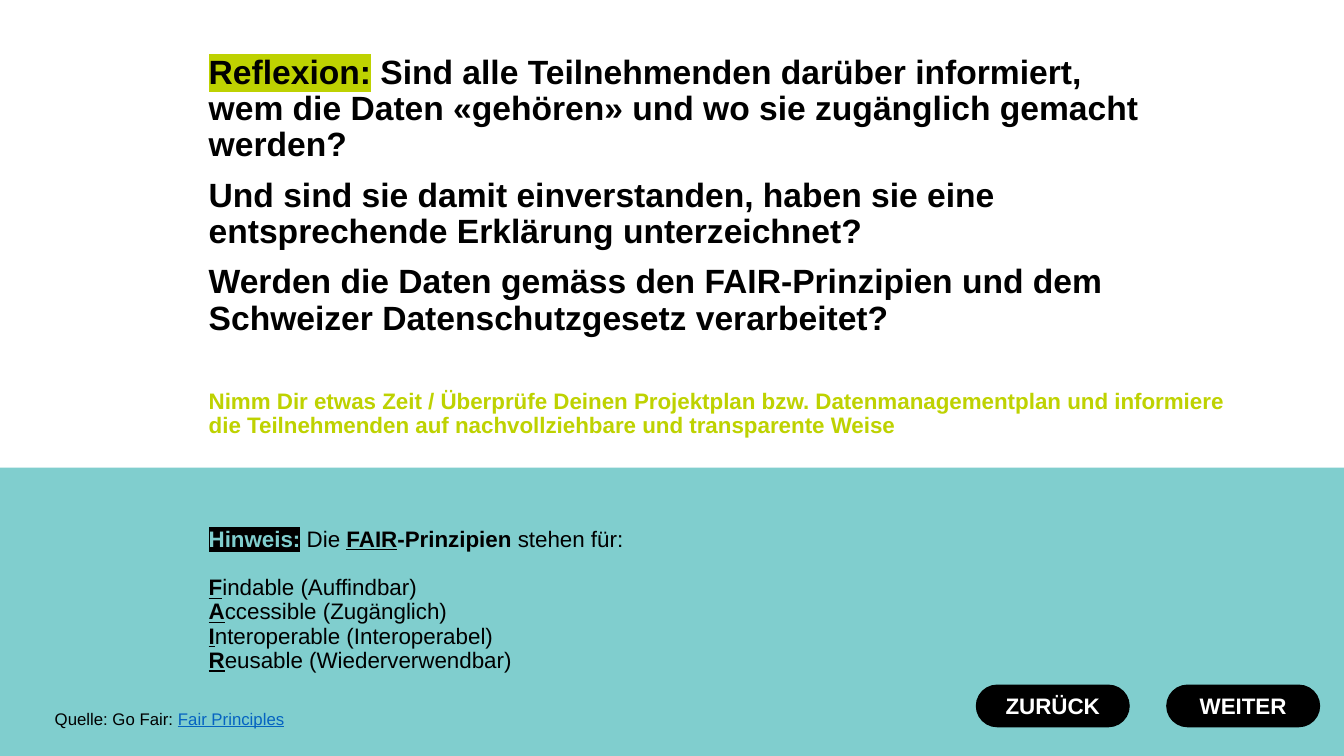
from dataclasses import dataclass
from typing import Any

from lxml import etree
from pptx import Presentation
from pptx.dml.color import RGBColor
from pptx.enum.shapes import MSO_SHAPE
from pptx.enum.text import MSO_ANCHOR, PP_ALIGN
from pptx.oxml.ns import qn
from pptx.util import Pt

RECT = MSO_SHAPE.RECTANGLE
ROUND = MSO_SHAPE.ROUNDED_RECTANGLE
MIDDLE = MSO_ANCHOR.MIDDLE
CENTER = PP_ALIGN.CENTER


@dataclass(frozen=True)
class Theme:
    font: str = "Arial"
    black: str = "000000"
    white: str = "FFFFFF"
    teal: str = "80CECE"
    lime: str = "BED201"
    blue: str = "0563C1"
    large: float = 24
    body: float = 16
    small: float = 12


THEME = Theme()


@dataclass(frozen=True)
class Span:
    text: str
    color: str = THEME.black
    bold: bool = False
    under: bool = False
    mark: str = ""


@dataclass(frozen=True)
class Para:
    spans: tuple[Span, ...]
    size: float = THEME.body
    before: float = 0


@dataclass(frozen=True)
class Box:
    left: float
    top: float
    width: float
    height: float
    paras: tuple[Para, ...]


@dataclass(frozen=True)
class Button:
    left: float
    label: str


def bold(text: str, color: str = THEME.black, mark: str = "") -> Span:
    return Span(text, color, bold=True, mark=mark)


def letter(word: str, gloss: str, before: float = 0) -> Para:
    """Give a line whose first letter stands out."""
    first = Span(word[0], bold=True, under=True)
    return Para((first, Span(f"{word[1:]} ({gloss})")), before=before)


BOXES = (
    Box(142, 36, 752, 298, (
        Para((
            bold("Reflexion:", mark=THEME.lime),
            bold(" Sind alle Teilnehmenden darüber informiert,\n"
                 "wem die Daten «gehören» und wo sie zugänglich gemacht werden?"),
        ), THEME.large),
        Para((bold("Und sind sie damit einverstanden, haben sie eine "
                   "entsprechende Erklärung unterzeichnet?"),), THEME.large, 10),
        Para((bold("Werden die Daten gemäss den FAIR-Prinzipien und dem "
                   "Schweizer Datenschutzgesetz verarbeitet?"),), THEME.large, 10),
        Para((bold("Nimm Dir etwas Zeit / Überprüfe Deinen Projektplan bzw. "
                   "Datenmanagementplan und informiere die Teilnehmenden auf "
                   "nachvollziehbare und transparente Weise", THEME.lime),), before=37.5),
    )),
    Box(32, 504, 666, 25, (
        Para((Span("Quelle: Go Fair: "),
              Span("Fair Principles", THEME.blue, under=True)), THEME.small),
    )),
    Box(142, 373.5, 800, 115, (
        Para((bold("Hinweis:", THEME.teal, THEME.black), Span(" Die "),
              Span("FAIR", bold=True, under=True), bold("-Prinzipien "),
              Span("stehen für:"))),
        letter("Findable", "Auffindbar", 17.5),
        letter("Accessible", "Zugänglich"),
        letter("Interoperable", "Interoperabel"),
        letter("Reusable", "Wiederverwendbar"),
    )),
)
BUTTONS = (Button(697.5, "ZURÜCK"), Button(833.5, "WEITER"))


def paint(color: Any, value: str) -> None:
    color.rgb = RGBColor.from_string(value)


def style(font: Any, span: Span, size: float) -> None:
    form = {"name": THEME.font, "size": Pt(size),
            "bold": span.bold, "underline": span.under}
    for key, value in form.items():
        setattr(font, key, value)
    font.fill.solid()
    paint(font.fill.fore_color, span.color)


def mark(run: Any, color: str) -> None:
    """Lay a highlight behind the run."""
    light = etree.Element(qn("a:highlight"))
    etree.SubElement(light, qn("a:srgbClr"), val=color)
    run._r.get_or_add_rPr().find(qn("a:solidFill")).addnext(light)


def write(line: Any, span: Span, size: float) -> None:
    for index, part in enumerate(span.text.split("\n")):
        if index:
            line.add_line_break()
        run = line.add_run()
        run.text = part
        style(run.font, span, size)
        if span.mark:
            mark(run, span.mark)


def place(slide: Any, box: Box) -> None:
    area = (box.left, box.top, box.width, box.height)
    frame = slide.shapes.add_textbox(*map(Pt, area)).text_frame
    frame.word_wrap = True
    for index, para in enumerate(box.paras):
        line = frame.add_paragraph() if index else frame.paragraphs[0]
        form = {"line_spacing": 0.9, "space_before": Pt(para.before)}
        for key, value in form.items():
            setattr(line, key, value)
        for span in para.spans:
            write(line, span, para.size)


def block(slide: Any, kind: Any, area: tuple[float, ...], color: str) -> Any:
    shape = slide.shapes.add_shape(kind, *map(Pt, area))
    shape.shadow.inherit = False
    shape.fill.solid()
    paint(shape.fill.fore_color, color)
    shape.line.fill.background()
    return shape


def press(slide: Any, button: Button) -> None:
    """Draw a button with its label."""
    area = (button.left, 489.5, 109, 29.5)
    shape = block(slide, ROUND, area, THEME.black)
    shape.adjustments[0] = 0.5
    paint(shape.line.color, THEME.black)
    shape.line.width = Pt(1)
    frame = shape.text_frame
    frame.vertical_anchor = MIDDLE
    line = frame.paragraphs[0]
    line.alignment = CENTER
    write(line, bold(button.label, THEME.white), THEME.body)


def main() -> None:
    deck = Presentation()
    deck.slide_width, deck.slide_height = Pt(960), Pt(540)
    slide = deck.slides.add_slide(deck.slide_layouts[6])
    block(slide, RECT, (0, 334, 960, 206), THEME.teal)
    for box in BOXES:
        place(slide, box)
    for button in BUTTONS:
        press(slide, button)
    deck.save("out.pptx")


if __name__ == "__main__":
    main()
